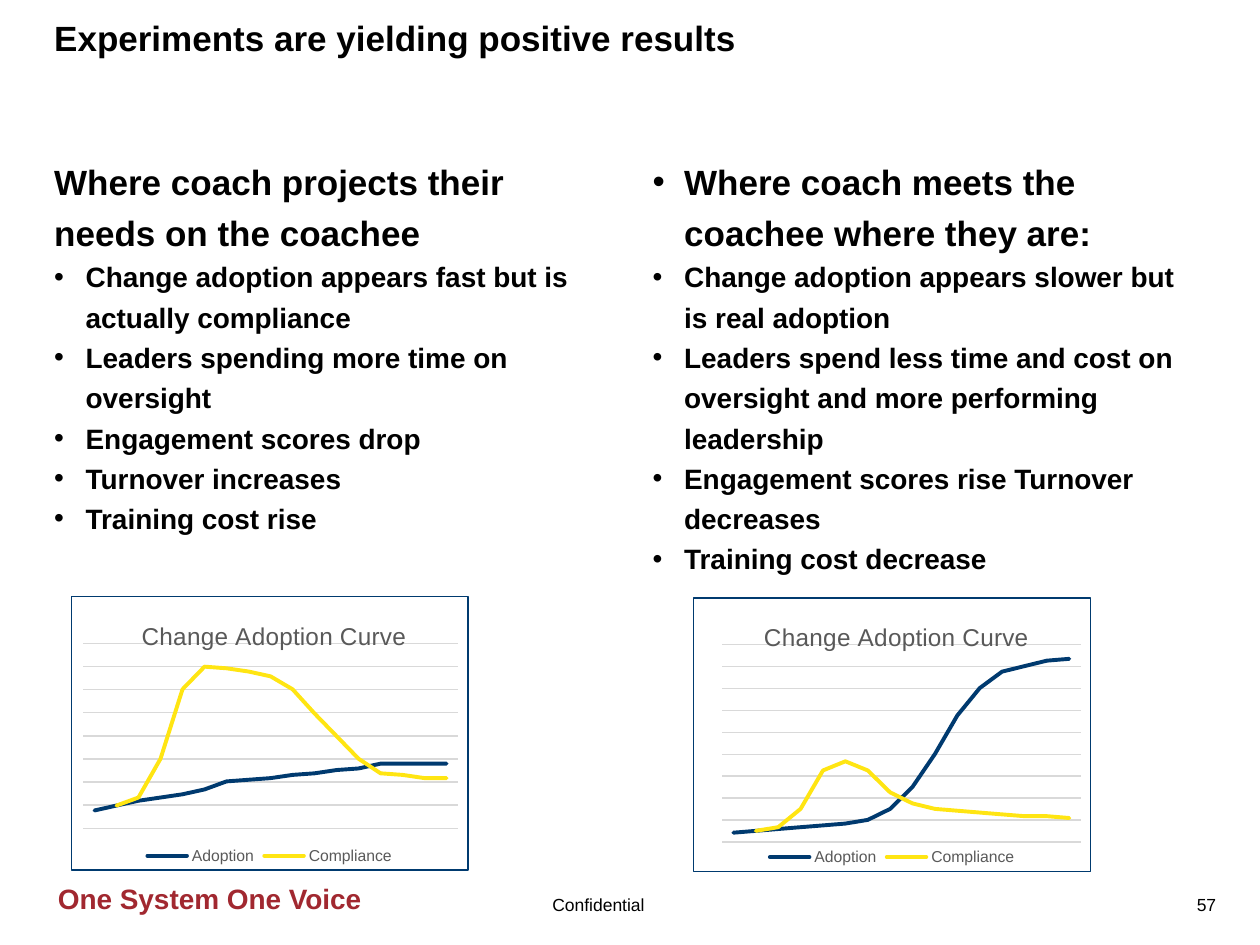
from pptx import Presentation
from pptx import util as u
from pptx.chart import data as chart_data
from pptx.dml.color import RGBColor
from pptx.enum import chart as charts, text
from pptx.oxml import parse_xml
from pptx.oxml.ns import nsdecls, qn

Inches = u.Inches
THEME = {
    "font": "Arial", "black": "000000", "red": "A12830", "navy": "003A6F",
    "yellow": "FFE512", "gray": "595959", "grid": "D9D9D9",
    "heading": 20, "bullet": 16, "chart_title": 14, "chart": 10, "legend": 9, "footer": 10,
}


def format_font(font, size, color="black", bold=False):
    values = {"name": THEME["font"], "size": u.Pt(THEME[size]), "bold": bold}
    for name, value in values.items():
        setattr(font, name, value)
    font.color.rgb = RGBColor.from_string(THEME[color])


def set_layout(element, index, target, **sizes):
    for old in element.findall(qn("c:layout")):
        element.remove(old)
    modes = "".join(f'<c:{axis}Mode val="edge"/>' for axis in "xy")
    values = "".join(f'<c:{name} val="{value}"/>' for name, value in sizes.items())
    element.insert(index, parse_xml(
        f'<c:layout {nsdecls("c")}><c:manualLayout>{target}{modes}{values}'
        '</c:manualLayout></c:layout>'))


presentation = Presentation()
presentation.slide_width, presentation.slide_height = Inches(10), Inches(7.5)
slide = presentation.slides.add_slide(presentation.slide_layouts[3])
title, left_body, right_body = slide.placeholders

footers = [
    ("57", 9.3, 7.05, 0.45, 0.27, text.PP_ALIGN.RIGHT, "footer", "black", False),
    ("Confidential", 4, 7.05, 1.5, 0.27, text.PP_ALIGN.CENTER, "footer", "black", False),
    ("One System One Voice", 0.25, 6.95, 2.83, 0.37, text.PP_ALIGN.CENTER, "bullet", "red", True),
]
for words, left, top, width, height, alignment, size, color, bold in footers:
    shape = slide.shapes.add_textbox(Inches(left), Inches(top), Inches(width), Inches(height))
    shape.text_frame.word_wrap = True
    paragraph = shape.text_frame.paragraphs[0]
    paragraph.text, paragraph.alignment = words, alignment
    format_font(paragraph.runs[0].font, size, color, bold)

bodies = [
    (title, 0.33, 0.08, 9.33, 0.77, ["Experiments are yielding positive results"]),
    (left_body, 0.33, 1.16, 4.58, 5.43, [
        "Where coach projects their needs on the coachee",
        "Change adoption appears fast but is actually compliance",
        "Leaders spending more time on oversight",
        "Engagement scores drop",
        "Turnover increases",
        "Training cost rise",
    ]),
    (right_body, 5.08, 1.16, 4.58, 5.43, [
        "Where coach meets the coachee where they are:",
        "Change adoption appears slower but is real adoption",
        "Leaders spend less time and cost on oversight and more performing leadership",
        "Engagement scores rise Turnover decreases",
        "Training cost decrease",
    ]),
]
for shape, left, top, width, height, lines in bodies:
    box = {"left": left, "top": top, "width": width, "height": height}
    for name, value in box.items():
        setattr(shape, name, Inches(value))
    frame = shape.text_frame
    frame.text = "\n".join(lines)
    frame.auto_size = text.MSO_AUTO_SIZE.NONE
    frame.vertical_anchor = text.MSO_ANCHOR.TOP
    for index, paragraph in enumerate(frame.paragraphs):
        spacing = {
            "alignment": text.PP_ALIGN.LEFT, "space_before": u.Pt(0), "space_after": u.Pt(0),
            "line_spacing": 1.0 if shape is title else 1.2,
        }
        for name, value in spacing.items():
            setattr(paragraph, name, value)
        format_font(paragraph.runs[0].font, "bullet" if index else "heading", bold=True)
        bulleted = index > 0 or shape is right_body
        indent = Inches(0.25) if bulleted else 0
        properties = paragraph._p.get_or_add_pPr()
        properties.set("marL", str(indent))
        properties.set("indent", str(-indent))
        bullet = 'a:buChar char="•"' if bulleted else "a:buNone"
        properties.append(parse_xml(f'<{bullet} {nsdecls("a")}/>'))

curves = [
    (5.5, 4.74, {"x": 0.072, "y": 0.172, "w": 0.903, "h": 0.721}, 11.96, 9,
     [5, 6, 7, 8, 9, 10, 12, 18, 30, 48, 69, 84, 93, 96, 99, 100],
     [None, 6, 8, 18, 39, 44, 39, 27, 21, 18, 17, 16, 15, 14, 14, 13]),
    (0.56, 4.73, {"x": 0.031, "y": 0.172, "w": 0.943, "h": 0.676}, 14.29, 8,
     [11, 14, 17, 19, 21, 24, 29, 30, 31, 33, 34, 36, 37, 40, 40, 40, 40],
     [None, 14, 19, 43, 86, 100, 99, 97, 94, 86, 71, 57, 43, 34, 33, 31, 31]),
]
for left, top, plot_box, step, intervals, adoption, compliance in curves:
    values = chart_data.CategoryChartData()
    values.categories = [str(number + 1) for number in range(len(adoption))]
    values.add_series("Adoption", adoption)
    values.add_series("Compliance", compliance)
    chart = slide.shapes.add_chart(
        charts.XL_CHART_TYPE.LINE, Inches(left), Inches(top),
        Inches(3.16), Inches(2.18), values).chart
    format_font(chart.font, "chart")

    chart.has_title = True
    chart.chart_title.text_frame.text = "Change Adoption Curve"
    format_font(chart.chart_title.text_frame.paragraphs[0].runs[0].font, "chart_title", "gray")
    set_layout(chart.chart_title._element, 1, "", x=0.166, y=0.07)
    set_layout(chart._chartSpace.chart.plotArea, 0, '<c:layoutTarget val="inner"/>', **plot_box)

    chart.has_legend = True
    chart.legend.position = charts.XL_LEGEND_POSITION.BOTTOM
    chart.legend.include_in_layout = False
    format_font(chart.legend.font, "legend", "gray")

    scale = {"minimum_scale": 0, "maximum_scale": round(step * intervals, 2),
             "major_unit": step, "has_major_gridlines": True, "visible": False}
    for name, value in scale.items():
        setattr(chart.value_axis, name, value)
    chart.category_axis.visible = False
    grid = chart.value_axis.major_gridlines.format.line
    grid.color.rgb = RGBColor.from_string(THEME["grid"])
    grid.width = u.Pt(0.75)

    for series, color in zip(chart.plots[0].series, ("navy", "yellow")):
        series.smooth = False
        series.marker.style = charts.XL_MARKER_STYLE.NONE
        line = series.format.line
        line.color.rgb = RGBColor.from_string(THEME[color])
        line.width = u.Pt(2.25)
        series._element.spPr.find(qn("a:ln")).set("cap", "rnd")

    chart._chartSpace.chart.addnext(parse_xml(
        f'<c:spPr {nsdecls("c", "a")}><a:noFill/><a:ln w="{u.Pt(0.75)}"><a:solidFill>'
        f'<a:srgbClr val="{THEME["navy"]}"/></a:solidFill></a:ln></c:spPr>'))

presentation.save("out.pptx")
